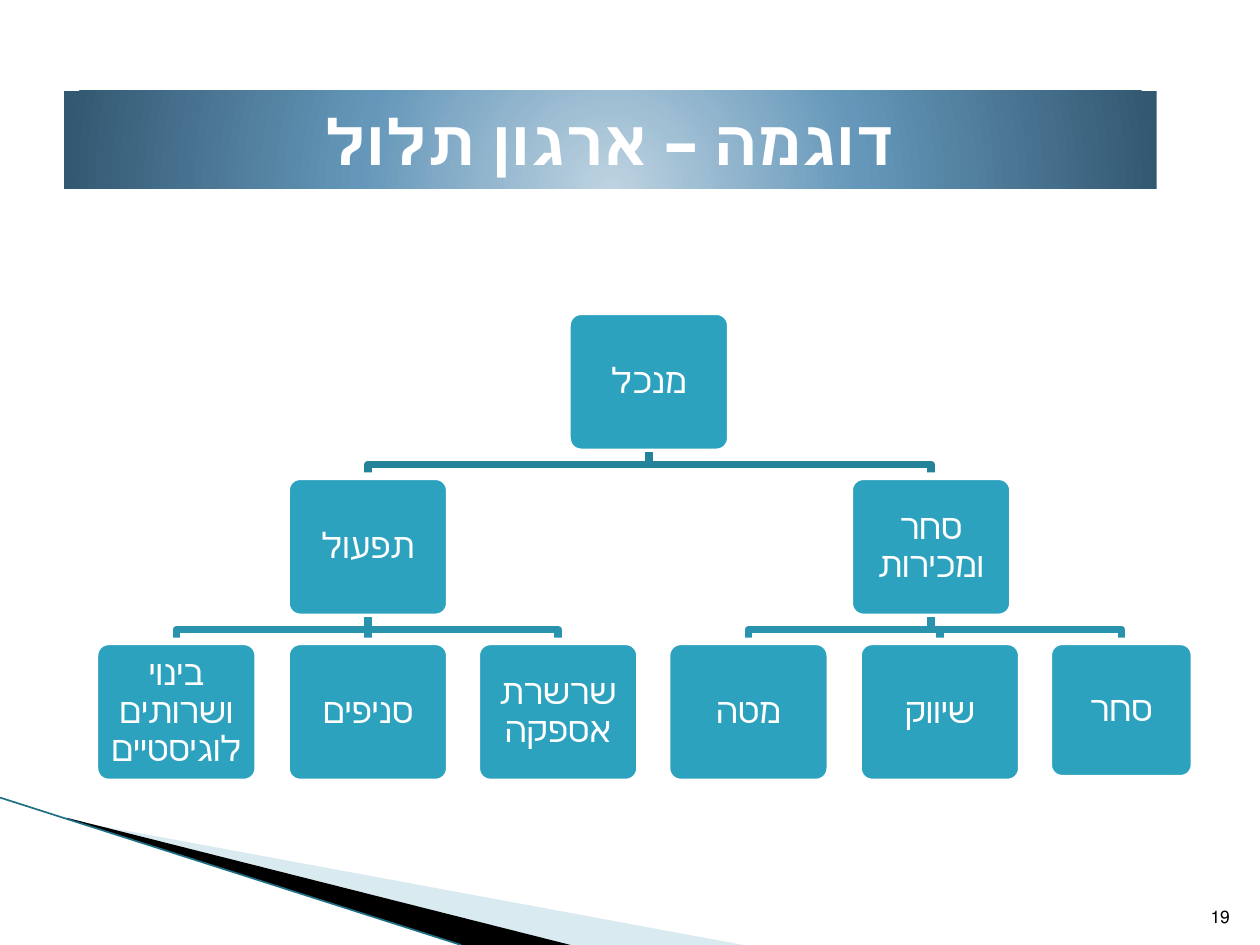
from dataclasses import dataclass

from lxml import etree
from pptx import Presentation
from pptx.dml.color import RGBColor
from pptx.enum.shapes import MSO_CONNECTOR, MSO_SHAPE
from pptx.enum.text import MSO_ANCHOR, PP_ALIGN
from pptx.oxml import parse_xml
from pptx.oxml.ns import nsdecls, qn
from pptx.util import Inches, Pt

ROUNDED, RECTANGLE = MSO_SHAPE.ROUNDED_RECTANGLE, MSO_SHAPE.RECTANGLE
STRAIGHT = MSO_CONNECTOR.STRAIGHT
CENTER, RIGHT = PP_ALIGN.CENTER, PP_ALIGN.RIGHT
MIDDLE, BOTTOM = MSO_ANCHOR.MIDDLE, MSO_ANCHOR.BOTTOM

COLORS = {
    "white": "FFFFFF",
    "black": "000000",
    "node": "2DA2BF",
    "upper_link": "248299",
    "lower_link": "2993AD",
    "pale_wedge": "A0CBDC",
    "wedge_edge": "1F7085",
}
TITLE_GRADIENT = ((0, "BED3E1"), (46, "6497B9"), (100, "335871"))
LEVEL_TOPS = (2.47, 3.78, 5.09)
LINK_COLORS = ("upper_link", "lower_link")
LINK_WIDTH = 4.33
LINK_MARGIN = 0.05


@dataclass(frozen=True)
class Node:
    text: str
    left: float
    children: tuple["Node", ...] = ()
    width: float = 1.3
    height: float = 1.12

    @property
    def center(self) -> float:
        return self.left + self.width / 2


CHART = Node("מנכל", 4.5, (
    Node("תפעול", 2.27, (
        Node("בינוי ושרותים לוגיסטיים", 0.75),
        Node("סניפים", 2.27),
        Node("שרשרת אספקה", 3.78),
    )),
    Node("סחר ומכירות", 6.74, (
        Node("מטה", 5.29),
        Node("שיווק", 6.81),
        Node("סחר", 8.32, width=1.16, height=1.09),
    )),
))


def color(name: str) -> RGBColor:
    return RGBColor.from_string(COLORS[name])


def write(box, text: str, size: float, font: str, ink: str,
          align=CENTER, anchor=MIDDLE, bold: bool = False) -> None:
    """Put one right-to-left paragraph in a shape."""
    frame = box.text_frame
    frame.word_wrap = True
    frame.vertical_anchor = anchor
    frame.text = text
    para = frame.paragraphs[0]
    para.alignment = align
    para._p.get_or_add_pPr().set("rtl", "1")
    for span in para.runs:
        span.font.size, span.font.bold, span.font.name = Pt(size), bold, font
        span.font.color.rgb = color(ink)


def corner(x: float, y: float) -> tuple[int, int]:
    return Inches(x), Inches(y)


def add_wedge(page, points: list[tuple[float, float]], fill: str):
    corners = [corner(*point) for point in points]
    builder = page.shapes.build_freeform(*corners[0])
    builder.add_line_segments(corners[1:], close=True)
    wedge = builder.convert_to_shape()
    wedge.shadow.inherit = False
    wedge.fill.solid()
    wedge.fill.fore_color.rgb = color(fill)
    wedge.line.fill.background()
    return wedge


def add_edge(page, start: tuple[float, float], end: tuple[float, float]) -> None:
    edge = page.shapes.add_connector(STRAIGHT, *corner(*start), *corner(*end))
    edge.line.color.rgb = color("wedge_edge")
    edge.line.width = Pt(0.95)
    etree.SubElement(edge._element.spPr, qn("a:effectLst"))


def add_link(page, parent: Node, child: Node, level: int) -> None:
    """Join a parent's bottom to a child's top with an elbow."""
    top, bottom = LEVEL_TOPS[level] + parent.height, LEVEL_TOPS[level + 1]
    middle = (top + bottom) / 2
    if parent.center == child.center:
        # A straight link keeps a narrow margin on both sides
        builder = page.shapes.build_freeform(*corner(parent.center - LINK_MARGIN, top))
        builder.move_to(*corner(parent.center, top))
        builder.add_line_segments([corner(child.center, bottom)], close=False)
        builder.move_to(*corner(child.center + LINK_MARGIN, bottom))
    else:
        builder = page.shapes.build_freeform(*corner(parent.center, top))
        builder.add_line_segments(
            [corner(parent.center, middle), corner(child.center, middle),
             corner(child.center, bottom)], close=False)
    link = builder.convert_to_shape()
    link.shadow.inherit = False
    link.fill.background()
    link.line.color.rgb = color(LINK_COLORS[level])
    link.line.width = Pt(LINK_WIDTH)


def add_node(page, node: Node, level: int = 0) -> None:
    """Draw a node, then its links and children."""
    box = page.shapes.add_shape(
        ROUNDED, Inches(node.left), Inches(LEVEL_TOPS[level]),
        Inches(node.width), Inches(node.height))
    box.adjustments[0] = 0.1
    box.shadow.inherit = False
    box.fill.solid()
    box.fill.fore_color.rgb = color("node")
    box.line.color.rgb = color("white")
    box.line.width = Pt(LINK_WIDTH)
    frame = box.text_frame
    frame.margin_left = frame.margin_right = Inches(0.08)
    frame.margin_top = frame.margin_bottom = Inches(0.08)
    write(box, node.text, 20, "Courier New", "white")
    frame.paragraphs[0].line_spacing = 0.9
    for child in node.children:
        add_link(page, node, child, level)
        add_node(page, child, level + 1)


def add_title(page) -> None:
    bar = page.shapes.add_shape(
        RECTANGLE, Inches(0.51), Inches(0.72), Inches(8.67), Inches(0.78))
    bar.shadow.inherit = False
    bar.line.fill.background()
    stops = "".join(
        f'<a:gs pos="{place * 1000}"><a:srgbClr val="{shade}"/></a:gs>'
        for place, shade in TITLE_GRADIENT)
    gradient = parse_xml(
        f'<a:gradFill {nsdecls("a")} rotWithShape="1"><a:gsLst>{stops}</a:gsLst>'
        '<a:path path="circle"><a:fillToRect l="50000" t="130000" '
        'r="50000" b="-30000"/></a:path></a:gradFill>')
    bar._element.spPr.find(qn("a:prstGeom")).addnext(gradient)
    write(bar, "דוגמה – ארגון תלול", 36, "Arial", "white", bold=True)


def main() -> None:
    deck = Presentation()
    deck.slide_width, deck.slide_height = Inches(10), Inches(7.5)
    page = deck.slides.add_slide(deck.slide_layouts[6])

    # Corner decoration
    pale = add_wedge(page, [(0.55, 6.51), (5.9, 7.5), (4.52, 7.5), (0.55, 6.5)],
                     "pale_wedge")
    tint = pale.fill._xPr.find(".//" + qn("a:srgbClr"))
    etree.SubElement(tint, qn("a:alpha")).set("val", "40000")
    add_wedge(page, [(0.53, 6.49), (4.53, 7.5), (3.66, 7.5), (0.54, 6.5)], "black")
    add_edge(page, (0, 6.33), (3.66, 7.5))

    # Organization chart
    add_node(page, CHART)

    # Page number
    number = page.shapes.add_textbox(
        Inches(9.46), Inches(7.01), Inches(0.4), Inches(0.4))
    write(number, "19", 10, "Arial", "black", align=RIGHT, anchor=BOTTOM)

    # Title bar
    add_title(page)
    deck.save("out.pptx")


if __name__ == "__main__":
    main()
